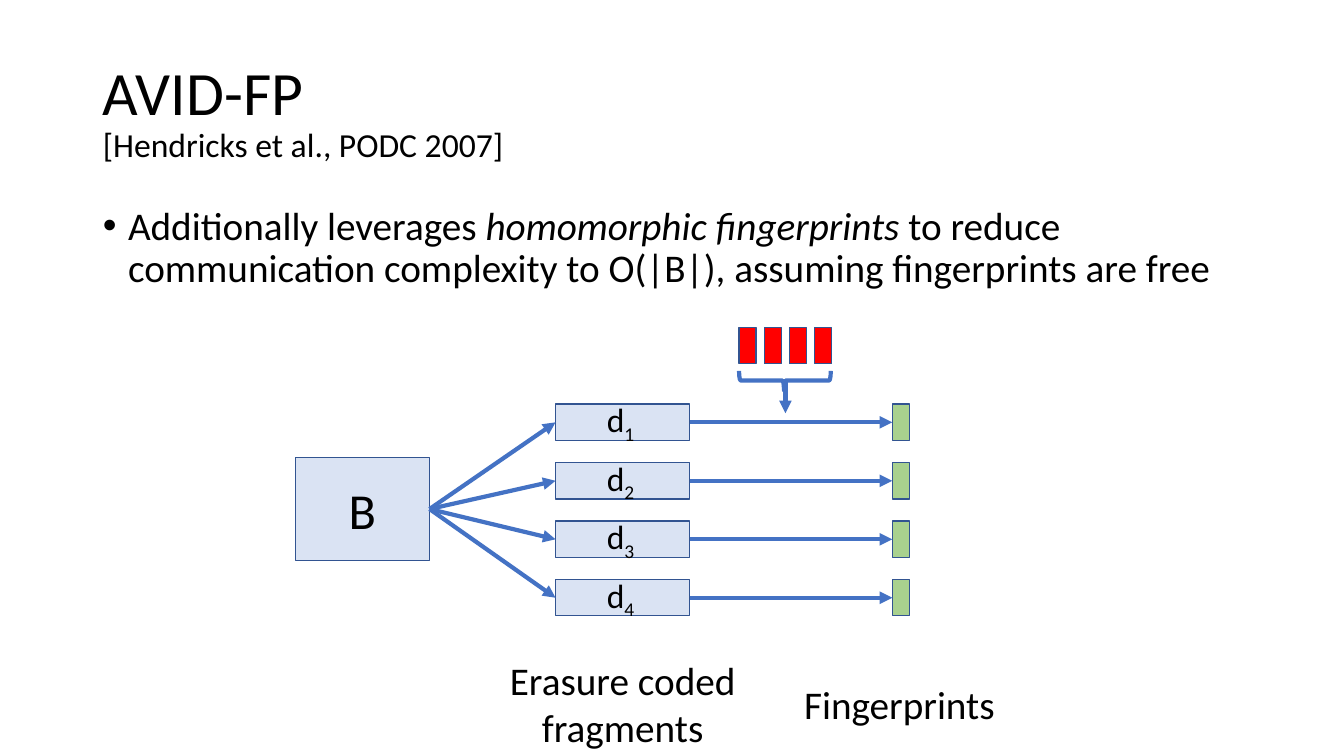
from lxml.etree import SubElement
from pptx import Presentation
from pptx.dml.color import RGBColor
from pptx.enum.shapes import MSO_CONNECTOR as Connector, MSO_SHAPE as Shape
from pptx.enum.text import MSO_ANCHOR as Anchor, MSO_AUTO_SIZE as AutoSize, PP_ALIGN as Align
from pptx.oxml.ns import qn
from pptx.util import Inches, Pt

BLACK, EDGE, ARROW = "000000", "325491", "4472C4"
BLUE, GREEN, RED = "DAE3F3", "A9D18E", "FF0000"
TOP, LEFT, BOTTOM, RIGHT = range(4)
ROW_TOP, ROW_STEP, ROW_HEIGHT = 4.01, 0.58, 0.36
BLOCK_LEFT, FRAGMENT_LEFT, FINGERPRINT_LEFT = 2.93, 5.51, 8.85
BLOCK_WIDTH, CHIP_WIDTH = 1.33, 0.17
CHIP_LEFT, CHIP_STEP = 7.33, 0.25


def color(hex_value):
    return RGBColor.from_string(hex_value)


def set_font(font, size):
    font.name = "Calibri"
    font.size = Pt(size)
    font.color.rgb = color(BLACK)


def place(shape, left, top, width, height):
    shape.left, shape.top = Inches(left), Inches(top)
    shape.width, shape.height = Inches(width), Inches(height)


def add_title(slide, name, citation):
    title = slide.shapes.title
    place(title, 0.92, 0.4, 11.5, 1.45)
    frame = title.text_frame
    frame.auto_size = AutoSize.NONE
    frame.vertical_anchor = Anchor.MIDDLE
    paragraph = frame.paragraphs[0]
    paragraph.alignment = Align.LEFT
    paragraph.line_spacing = 0.9
    set_font(paragraph.font, 44)
    paragraph.add_run().text = name
    paragraph.add_line_break()
    source = paragraph.add_run()
    source.text = citation
    source.font.size = Pt(24)


def add_bullet(slide, parts):
    body = slide.placeholders[1]
    place(body, 0.92, 2, 11.5, 4.76)
    body.text_frame.auto_size = AutoSize.NONE
    paragraph = body.text_frame.paragraphs[0]
    paragraph.line_spacing = 0.9
    paragraph.space_before = Pt(10)
    set_font(paragraph.font, 28)
    properties = paragraph._p.get_or_add_pPr()
    properties.set("marL", str(Inches(0.25)))
    properties.set("indent", str(-Inches(0.25)))
    for text, italic in parts:
        run = paragraph.add_run()
        run.text = text
        run.font.italic = italic


def add_box(slide, left, top, width, height, fill, text=""):
    box = slide.shapes.add_shape(Shape.RECTANGLE, 0, 0, 0, 0)
    place(box, left, top, width, height)
    box.shadow.inherit = False
    box.fill.solid()
    box.fill.fore_color.rgb = color(fill)
    box.line.color.rgb = color(EDGE)
    box.line.width = Pt(1)
    if text:
        box.text_frame.text = text
        box.text_frame.vertical_anchor = Anchor.MIDDLE
        paragraph = box.text_frame.paragraphs[0]
        paragraph.alignment = Align.CENTER
        set_font(paragraph.font, 36)
    return box


def add_arrow(slide, start, end):
    points = [Inches(value) for value in (*start, *end)]
    arrow = slide.shapes.add_connector(Connector.STRAIGHT, *points)
    arrow.line.color.rgb = color(ARROW)
    arrow.line.width = Pt(3)
    SubElement(arrow.line._get_or_add_ln(), qn("a:tailEnd"), type="triangle")
    SubElement(arrow._element.spPr, qn("a:effectLst"))
    return arrow


def join(slide, source, target):
    arrow = add_arrow(slide, (0, 0), (1, 1))
    arrow.begin_connect(source, RIGHT)
    arrow.end_connect(target, LEFT)


def add_text(slide, left, top, width, height, text, size, wrap=True):
    box = slide.shapes.add_textbox(0, 0, 0, 0)
    place(box, left, top, width, height)
    box.text_frame.word_wrap = wrap
    paragraph = box.text_frame.paragraphs[0]
    paragraph.add_run().text = text
    set_font(paragraph.font, size)
    return paragraph


def add_caption(slide, left, top, width, height, text):
    add_text(slide, left, top, width, height, text, 28).alignment = Align.CENTER


def add_fragment_label(slide, top, number):
    paragraph = add_text(slide, 5.92, top, 0.49, 0.5, "d", 24, wrap=False)
    subscript = paragraph.add_run()
    subscript.text = str(number)
    subscript._r.get_or_add_rPr().set("baseline", "-25000")


def add_brace(slide):
    brace = slide.shapes.add_shape(Shape.LEFT_BRACE, 0, 0, 0, 0)
    place(brace, 7.69, 3.32, 0.19, 0.91)
    brace.rotation = 270
    brace.adjustments[0] = 0.083
    brace.adjustments[1] = 0.49
    brace.shadow.inherit = False
    brace.fill.background()
    brace.line.color.rgb = color(ARROW)
    brace.line.width = Pt(3)


def add_diagram(slide):
    block = add_box(slide, BLOCK_LEFT, 4.54, BLOCK_WIDTH, 1.02, BLUE, "B")
    for row in range(4):
        top = ROW_TOP + row * ROW_STEP
        fragment = add_box(slide, FRAGMENT_LEFT, top, BLOCK_WIDTH, ROW_HEIGHT, BLUE)
        fingerprint = add_box(slide, FINGERPRINT_LEFT, top, CHIP_WIDTH, ROW_HEIGHT, GREEN)
        join(slide, block, fragment)
        join(slide, fragment, fingerprint)
        add_fragment_label(slide, top - 0.1, row + 1)
        add_box(slide, CHIP_LEFT + row * CHIP_STEP, 3.25, CHIP_WIDTH, ROW_HEIGHT, RED)
    add_brace(slide)
    add_arrow(slide, (7.79, 3.76), (7.79, 4.1))
    add_caption(slide, 4.93, 6.46, 2.49, 1.04, "Erasure coded fragments")
    add_caption(slide, 7.84, 6.7, 2.16, 0.57, "Fingerprints")


def main():
    presentation = Presentation()
    presentation.slide_width = Inches(13.33)
    presentation.slide_height = Inches(7.5)
    slide = presentation.slides.add_slide(presentation.slide_layouts[1])
    add_title(slide, "AVID-FP", "[Hendricks et al., PODC 2007]")
    add_bullet(slide, [
        ("Additionally leverages ", False),
        ("homomorphic fingerprints ", True),
        ("to reduce communication complexity to O(|B|), assuming fingerprints are free", False),
    ])
    add_diagram(slide)
    presentation.save("out.pptx")


if __name__ == "__main__":
    main()
